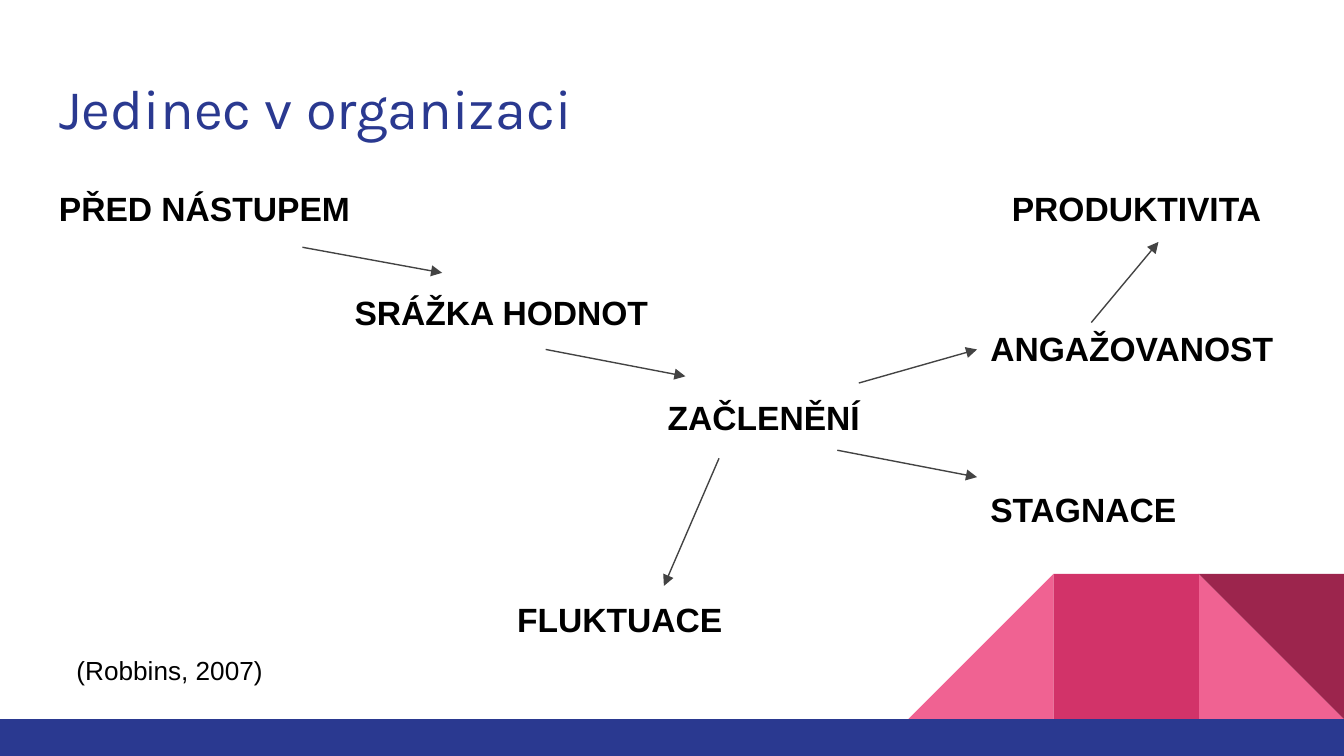
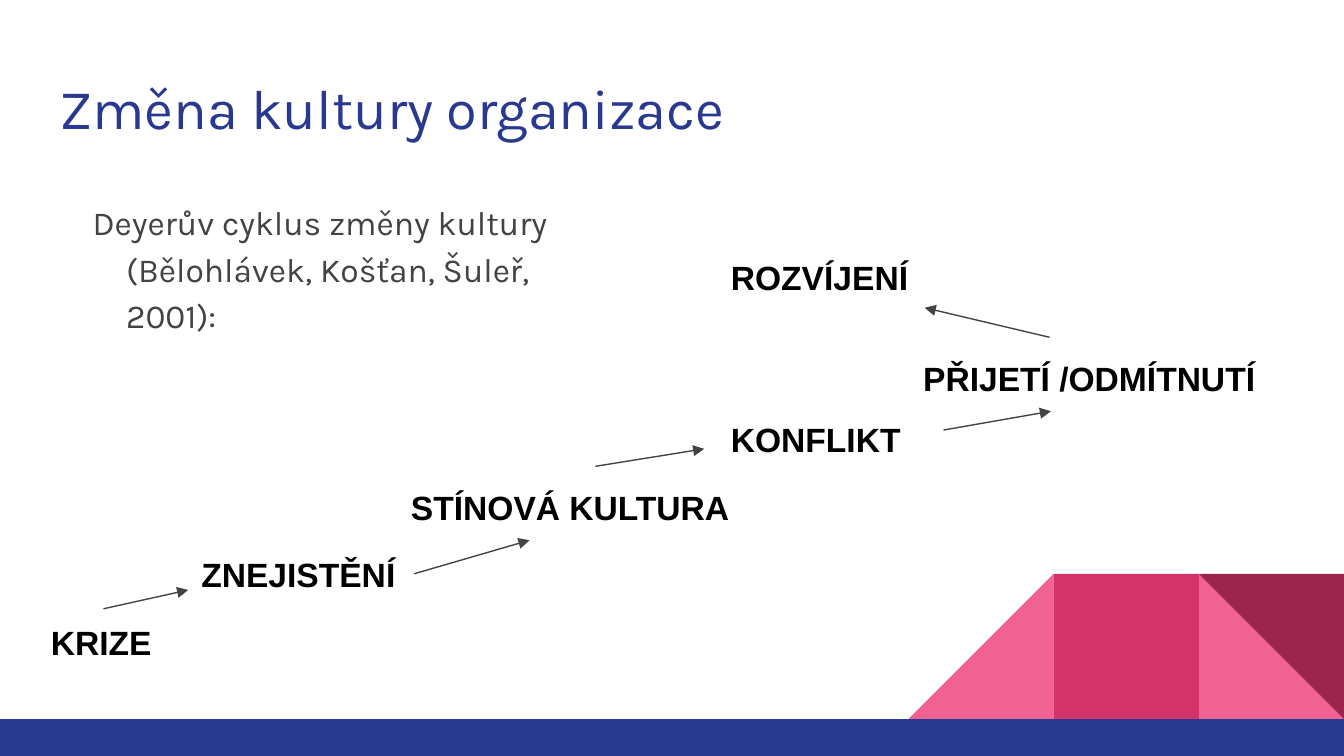
import pptx
import pptx.util
import pptx.dml.color
import pptx.enum.shapes
import pptx.enum.text
import pptx.oxml
import pptx.oxml.ns
from dataclasses import dataclass

PX = 4572  # 200 px to the inch
KIND = pptx.enum.shapes.MSO_SHAPE


@dataclass(frozen=True)
class Theme:
    head: str = "Karla"
    plain: str = "Arial"
    blue: str = "2A3990"
    pink: str = "F06292"
    rose: str = "D23369"
    wine: str = "9C254D"
    grey: str = "434343"
    black: str = "000000"
    title: int = 30
    label: int = 18
    cite: int = 14
    line: float = 0.75


theme = Theme()
rgb = pptx.dml.color.RGBColor.from_string


def place(shape, box):
    shape.left, shape.top, shape.width, shape.height = [v * PX for v in box]


def write(shape, text, size, face, color, bold=False):
    """Fill a shape with one left-aligned paragraph and return it."""
    frame = shape.text_frame
    frame.word_wrap = True
    frame.auto_size = pptx.enum.text.MSO_AUTO_SIZE.NONE
    frame.vertical_anchor = pptx.enum.text.MSO_ANCHOR.TOP
    frame.margin_left = frame.margin_right = 20 * PX
    frame.margin_top = frame.margin_bottom = 20 * PX
    frame.text = text
    para = frame.paragraphs[0]
    para.alignment = pptx.enum.text.PP_ALIGN.LEFT
    para.font.size = pptx.util.Pt(size)
    para.font.name = face
    para.font.bold = bold
    para.font.color.rgb = rgb(color)
    return para


# Labels: text, left, top, width. Arrows: from x, y, to x, y.
pages = [
    {
        "title": "Jedinec v organizaci",
        "labels": [
            ("PŘED NÁSTUPEM", 68, 260, 512),
            ("SRÁŽKA HODNOT", 508, 414, 512),
            ("ZAČLENĚNÍ", 974, 570, 368),
            ("ANGAŽOVANOST", 1454, 468, 478),
            ("PRODUKTIVITA", 1486, 260, 478),
            ("STAGNACE", 1454, 708, 478),
            ("FLUKTUACE", 750, 872, 478),
        ],
        "arrows": [
            (450, 368, 658, 406),
            (812, 520, 1020, 560),
            (1246, 670, 1454, 710),
            (1278, 570, 1454, 520),
            (1624, 480, 1724, 360),
            (1070, 682, 988, 872),
        ],
    },
    {
        "title": "Změna kultury organizace",
        "labels": [
            ("KRIZE", 56, 906, 238),
            ("ZNEJISTĚNÍ", 280, 804, 334),
            ("STÍNOVÁ KULTURA", 592, 704, 548),
            ("KONFLIKT", 1068, 604, 334),
            ("PŘIJETÍ /ODMÍTNUTÍ", 1354, 512, 578),
            ("ROZVÍJENÍ", 1068, 362, 334),
        ],
        "arrows": [
            (154, 906, 280, 878),
            (616, 854, 788, 804),
            (886, 694, 1048, 668),
            (1404, 640, 1564, 612),
            (1562, 502, 1376, 458),
        ],
    },
]

deck = pptx.Presentation()
deck.slide_width, deck.slide_height = 2000 * PX, 1125 * PX
layout = deck.slide_layouts[5]
slides = [deck.slides.add_slide(layout) for page in pages]

# Shared corner tiles and bottom band, moved into the layout
tile, floor = 216, 1070
roof = floor - tile
decor = [
    (KIND.RIGHT_TRIANGLE, 2000 - tile, roof, tile, tile, theme.pink),
    (KIND.RIGHT_TRIANGLE, 2000 - 3 * tile, roof, tile, tile, theme.pink),
    (KIND.RECTANGLE, 2000 - 2 * tile, roof, tile, tile, theme.rose),
    (KIND.RIGHT_TRIANGLE, 2000 - tile, roof, tile, tile, theme.wine),
    (KIND.RECTANGLE, 0, floor, 2000, 1125 - floor, theme.blue),
]
parts = []
for kind, x, y, w, h, color in decor:
    part = slides[0].shapes.add_shape(kind, x * PX, y * PX, w * PX, h * PX)
    part.shadow.inherit = False
    part.fill.solid()
    part.fill.fore_color.rgb = rgb(color)
    part.line.fill.background()
    parts.append(part)
parts[1].element.spPr.xfrm.set("flipH", "1")
parts[3].rotation = 180
for num, part in enumerate(parts, 20):
    part.element.nvSpPr.cNvPr.set("id", str(num))
    layout.shapes.element.append(part.element)

for slide, page in zip(slides, pages):
    title = slide.shapes.title
    place(title, (68, 90, 1864, 132))
    write(title, page["title"], theme.title, theme.head, theme.blue)

    for text, x, y, w in page["labels"]:
        label = slide.shapes.add_textbox(x * PX, y * PX, w * PX, 100 * PX)
        write(label, text, theme.label, theme.plain, theme.black, True)

    for ends in page["arrows"]:
        arrow = slide.shapes.add_connector(
            pptx.enum.shapes.MSO_CONNECTOR.STRAIGHT, *[v * PX for v in ends])
        arrow.line.color.rgb = rgb(theme.grey)
        arrow.line.width = pptx.util.Pt(theme.line)
        tip = pptx.oxml.parse_xml(
            f'<a:tailEnd {pptx.oxml.ns.nsdecls("a")} type="triangle" w="med" len="med"/>')
        arrow.line._get_or_add_ln().append(tip)
        arrow.element.spPr.append(pptx.oxml.parse_xml(
            f'<a:effectLst {pptx.oxml.ns.nsdecls("a")}/>'))

cite = slides[0].shapes.add_textbox(94 * PX, 954 * PX, 564 * PX, 60 * PX)
write(cite, "(Robbins, 2007)", theme.cite, theme.plain, theme.black)

intro = slides[1].shapes.add_textbox(68 * PX, 272 * PX, 818 * PX, 396 * PX)
para = write(intro, "Deyerův cyklus změny kultury (Bělohlávek, Košťan, Šuleř, 2001):",
             theme.label, theme.head, theme.grey)
para.line_spacing = 1.15
para.space_after = pptx.util.Pt(16)
props = para._p.get_or_add_pPr()
props.set("marL", str(100 * PX))
props.set("indent", str(-50 * PX))

deck.save("out.pptx")
